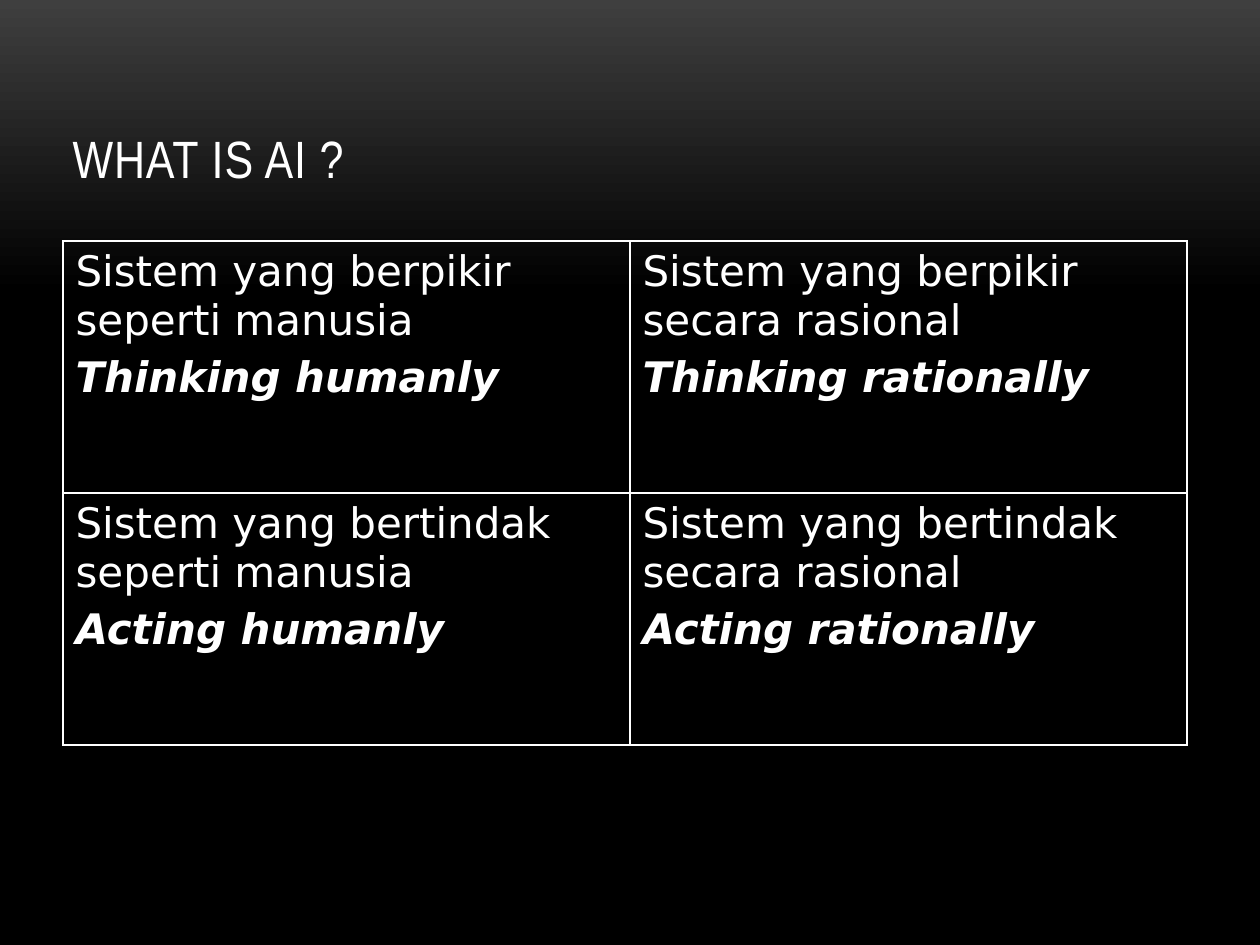
from lxml.etree import SubElement
from pptx import Presentation
from pptx.dml.color import RGBColor as Color
from pptx.enum.text import MSO_ANCHOR as Anchor, MSO_AUTO_SIZE as AutoSize, PP_ALIGN as Align
from pptx.oxml.ns import qn
from pptx.util import Pt

EMU_PER_PX = 914400 / 126
COLORS = {"glow": "3F3F3F", "black": "000000", "white": "FFFFFF"}
TITLE_ONLY = 5

# Rows of the table: each cell is a description and its English term
APPROACHES = [
    [("Sistem yang berpikir seperti manusia", "Thinking humanly"),
     ("Sistem yang berpikir secara rasional", "Thinking rationally")],
    [("Sistem yang bertindak seperti manusia", "Acting humanly"),
     ("Sistem yang bertindak secara rasional", "Acting rationally")],
]
COLUMN_WIDTHS = [567, 557]
ROW_HEIGHT = 252


def px(length):
    return round(length * EMU_PER_PX)


def color(name):
    return Color.from_string(COLORS[name])


def set_font(font, name, size):
    font.name = name
    font.size = Pt(size)
    font.color.rgb = color("white")


def paint_background(page):
    fill = page.background.fill
    fill.gradient()
    fill.gradient_angle = 270
    for stop, name, position in zip(fill.gradient_stops, ("glow", "black"), (0, 0.31)):
        stop.color.rgb = color(name)
        stop.position = position


def add_title(page, text):
    box = page.shapes.title
    box.left, box.top, box.width, box.height = map(px, (60, 14, 1137, 181))
    frame = box.text_frame
    frame.auto_size = AutoSize.NONE
    frame.word_wrap = True
    frame.vertical_anchor = Anchor.BOTTOM
    para = frame.paragraphs[0]
    para.alignment = Align.LEFT
    span = para.add_run()
    span.text = text
    set_font(para.font, "Arial Narrow", 30)
    # Letter spacing in hundredths of a point
    span._r.get_or_add_rPr().set("spc", "50")


def add_borders(cell):
    properties = cell._tc.get_or_add_tcPr()
    for side in ("a:lnL", "a:lnR", "a:lnT", "a:lnB"):
        line = SubElement(properties, qn(side), w=str(Pt(1)))
        fill = SubElement(line, qn("a:solidFill"))
        SubElement(fill, qn("a:srgbClr"), val=COLORS["white"])


def fill_cell(cell, description, term):
    # Borders must precede the fill in the cell properties
    add_borders(cell)
    cell.fill.background()
    frame = cell.text_frame
    frame.text = f"{description}\n{term}"
    for para in frame.paragraphs:
        set_font(para.font, "DejaVu Sans", 24)
    term_para = frame.paragraphs[1]
    term_para.space_before = Pt(5)
    term_para.font.bold = term_para.font.italic = True


def add_grid(page, rows):
    size = sum(COLUMN_WIDTHS), ROW_HEIGHT * len(rows)
    table = page.shapes.add_table(
        len(rows), len(COLUMN_WIDTHS), *map(px, (63, 241, *size))).table
    table.first_row = table.horz_banding = False
    for column, width in zip(table.columns, COLUMN_WIDTHS):
        column.width = px(width)
    for row, entries in zip(table.rows, rows):
        row.height = px(ROW_HEIGHT)
        for cell, entry in zip(row.cells, entries):
            fill_cell(cell, *entry)


def main():
    deck = Presentation()
    deck.slide_width, deck.slide_height = px(1260), px(945)
    page = deck.slides.add_slide(deck.slide_layouts[TITLE_ONLY])
    paint_background(page)
    add_title(page, "WHAT IS AI ?")
    add_grid(page, APPROACHES)
    deck.save("out.pptx")


if __name__ == "__main__":
    main()
